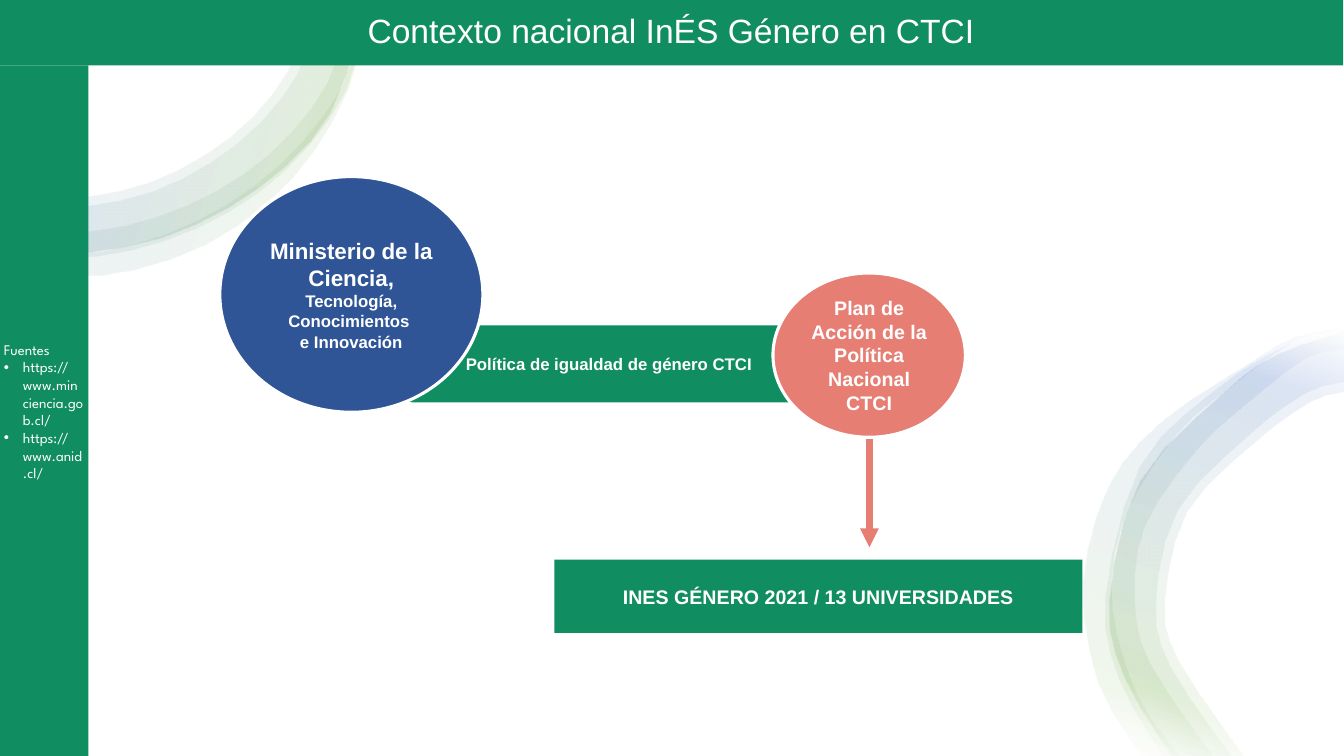
"""Build the slide on the national context of InÉS Género en CTCI."""
from lxml.etree import SubElement
from pptx import Presentation
from pptx.dml.color import RGBColor
from pptx.enum.shapes import MSO_CONNECTOR as Link, MSO_SHAPE as Shape
from pptx.enum.text import MSO_ANCHOR as Anchor, MSO_AUTO_SIZE as AutoSize, PP_ALIGN as Align
from pptx.oxml.ns import qn
from pptx.util import Cm, Pt

WHITE = RGBColor(0xFF, 0xFF, 0xFF)
GREEN = RGBColor(0x10, 0x8D, 0x61)
CORAL = RGBColor(0xE6, 0x7E, 0x74)
NAVY = RGBColor(0x2F, 0x55, 0x97)
LEAF = RGBColor(0x70, 0xAD, 0x47)
SKY = RGBColor(0x44, 0x72, 0xC4)

RIBBON_STOPS = [(2, WHITE), (16, LEAF), (85, SKY), (100, WHITE)]
RIBBON_OPACITY = 10
HUNDREDTH_INCH = 0.0254

TOP_OUTER = [(364, 0), (328, 112), (257, 186), (162, 235), (56, 253), (0, 248)]
TOP_RIBBONS = [
    (TOP_OUTER, [(0, 190), (56, 198), (148, 181), (230, 135), (286, 70), (306, 0)]),
    (TOP_OUTER, [(0, 200), (56, 207), (151, 190), (236, 142), (295, 74), (316, 0)]),
    ([(364, 0), (343, 90), (282, 170), (196, 226), (96, 254), (0, 249)],
     [(0, 225), (93, 229), (185, 204), (266, 154), (325, 82), (348, 0)]),
    ([(366, 0), (346, 88), (291, 176), (205, 242), (99, 273), (0, 264)],
     [(0, 247), (96, 250), (193, 220), (277, 164), (340, 85), (363, 0)]),
]

SIDE_OUTER = [(1163, 750), (1117, 674), (1101, 598), (1131, 478), (1213, 391),
              (1267, 352), (1334, 330)]
SIDE_RIBBONS = [
    ([(1133, 750), (1090, 678), (1075, 579), (1100, 483), (1152, 419), (1239, 361),
      (1284, 335), (1334, 326)],
     [(1334, 329), (1285, 339), (1223, 383), (1165, 434), (1114, 519), (1104, 603),
      (1128, 688), (1170, 750)]),
    ([(1154, 750), (1110, 673), (1097, 592), (1131, 463), (1203, 389), (1276, 343),
      (1334, 330)],
     [(1334, 346), (1295, 356), (1239, 399), (1187, 447), (1136, 522), (1126, 595),
      (1141, 658), (1203, 750)]),
    (SIDE_OUTER, [(1334, 379), (1296, 390), (1239, 432), (1169, 506), (1147, 598),
                  (1162, 662), (1222, 750)]),
    (SIDE_OUTER, [(1334, 389), (1300, 399), (1244, 440), (1178, 508), (1156, 598),
                  (1170, 656), (1234, 750)]),
]


def smooth(knots, steps=3):
    """Return points on a Catmull-Rom curve through the knots."""
    padded = [knots[0], *knots, knots[-1]]
    points = [knots[0]]
    for before, start, end, after in zip(padded, padded[1:], padded[2:], padded[3:]):
        for step in range(1, steps + 1):
            t = step / steps
            points.append(tuple(
                b + t / 2 * (c - a + t * (2 * a - 5 * b + 4 * c - d + t * (3 * b - a - 3 * c + d)))
                for a, b, c, d in zip(before, start, end, after)))
    return points


class SlideBuilder:
    """Hold the style and the current slide."""

    font_name = "Arial"
    source_font = "League Spartan"

    def __init__(self, deck):
        """Add a page with a title and a body."""
        self.page = deck.slides.add_slide(deck.slide_layouts[1])
        self.page.background.fill.solid()
        self.page.background.fill.fore_color.rgb = WHITE

    def style_span(self, span, size, bold=False, name=font_name):
        """Format one run."""
        span.font.size, span.font.bold, span.font.name = Pt(size), bold, name
        span.font.color.rgb = WHITE

    def place(self, box, left, top, width, height):
        """Move a placeholder in front and paint it green."""
        box.left, box.top, box.width, box.height = map(Cm, (left, top, width, height))
        box.fill.solid()
        box.fill.fore_color.rgb = GREEN
        box.text_frame.auto_size = AutoSize.NONE
        box.text_frame.vertical_anchor = Anchor.MIDDLE
        box._element.getparent().append(box._element)

    def title(self, text, *frame):
        """Write the title band."""
        box = self.page.shapes.title
        self.place(box, *frame)
        box.text_frame.text = text
        para = box.text_frame.paragraphs[0]
        para.alignment = Align.CENTER
        self.style_span(para.runs[0], 24)

    def sources(self, heading, links, *frame):
        """Write the sideways list of sources."""
        box = self.page.placeholders[1]
        self.place(box, *frame)
        box.text_frame.text = "\n".join([heading, *links])
        box.text_frame._txBody.bodyPr.set("vert", "vert270")
        for index, para in enumerate(box.text_frame.paragraphs):
            indent = Cm(0.48) if index else 0
            props = para._p.get_or_add_pPr()
            props.set("marL", str(indent))
            props.set("indent", str(-indent))
            if index:
                SubElement(props, qn("a:buFont"), typeface="Arial")
                SubElement(props, qn("a:buChar"), char="•")
            else:
                SubElement(props, qn("a:buNone"))
            para.space_before = Pt(0)
            para.alignment = Align.LEFT
            self.style_span(para.runs[0], 10.5, name=self.source_font)

    def ribbon(self, outer, inner, angle):
        """Draw a translucent band between two curves."""
        points = [(Cm(x * HUNDREDTH_INCH), Cm(y * HUNDREDTH_INCH))
                  for x, y in smooth(outer) + smooth(inner)]
        builder = self.page.shapes.build_freeform(*points[0])
        builder.add_line_segments(points[1:], close=True)
        band = builder.convert_to_shape()
        band.shadow.inherit = False
        band.line.fill.background()
        band.fill.gradient()
        band.fill.gradient_angle = 360 - angle
        stops = band._element.spPr.find(qn("a:gradFill")).find(qn("a:gsLst"))
        stops.clear()
        for position, color in RIBBON_STOPS:
            stop = SubElement(stops, qn("a:gs"), pos=str(position * 1000))
            paint = SubElement(stop, qn("a:srgbClr"), val=str(color))
            SubElement(paint, qn("a:alpha"), val=str(RIBBON_OPACITY * 1000))

    def node(self, kind, frame, color, lines, border=0):
        """Draw a filled shape whose lines are lists of (text, size)."""
        box = self.page.shapes.add_shape(kind, *map(Cm, frame))
        box.shadow.inherit = False
        box.fill.solid()
        box.fill.fore_color.rgb = color
        if border:
            box.line.color.rgb, box.line.width = WHITE, Pt(border)
        else:
            box.line.fill.background()
        box.text_frame.vertical_anchor = Anchor.MIDDLE
        for index, line in enumerate(lines):
            para = box.text_frame.add_paragraph() if index else box.text_frame.paragraphs[0]
            para.alignment = Align.CENTER
            for text, size in line:
                span = para.add_run()
                span.text = text
                self.style_span(span, size, bold=True)

    def arrow(self, x, top, bottom):
        """Draw a thick arrow pointing down."""
        link = self.page.shapes.add_connector(Link.STRAIGHT, Cm(x), Cm(top), Cm(x), Cm(bottom))
        link.line.color.rgb, link.line.width = CORAL, Pt(4.5)
        SubElement(link.line._get_or_add_ln(), qn("a:tailEnd"), type="triangle")
        SubElement(link._element.spPr, qn("a:effectLst"))


def main():
    """Build and save the deck."""
    deck = Presentation()
    deck.slide_width, deck.slide_height = Cm(33.87), Cm(19.05)
    slide = SlideBuilder(deck)
    for ribbons, angle in ((TOP_RIBBONS, 200), (SIDE_RIBBONS, 290)):
        for outer, inner in ribbons:
            slide.ribbon(outer, inner, angle)
    slide.title("Contexto nacional InÉS Género en CTCI", -0.03, -0.13, 33.88, 1.78)
    slide.sources("Fuentes", ["https://www.minciencia.gob.cl/", "https://www.anid.cl/"],
                  -0.03, 1.65, 2.26, 17.42)
    slide.node(Shape.RECTANGLE, (13.97, 14.1, 13.31, 1.85), GREEN,
               [[("INES GÉNERO 2021 / 13 UNIVERSIDADES", 14)]])
    slide.node(Shape.ROUNDED_RECTANGLE, (10.08, 8.18, 10.54, 1.98), GREEN,
               [[("Política de igualdad de género CTCI", 12)]], 1)
    slide.arrow(21.91, 11.02, 13.79)
    slide.node(Shape.OVAL, (19.48, 6.88, 4.85, 4.14), CORAL,
               [[("Plan de Acción de la Política Nacional CTCI", 14)]], 2.25)
    slide.node(Shape.OVAL, (5.54, 4.45, 6.63, 5.94), NAVY,
               [[("Ministerio de la Ciencia, ", 16), ("Tecnología, Conocimientos ", 12)],
                [("e Innovación", 12)]], 2.25)
    deck.save("out.pptx")


if __name__ == "__main__":
    main()
